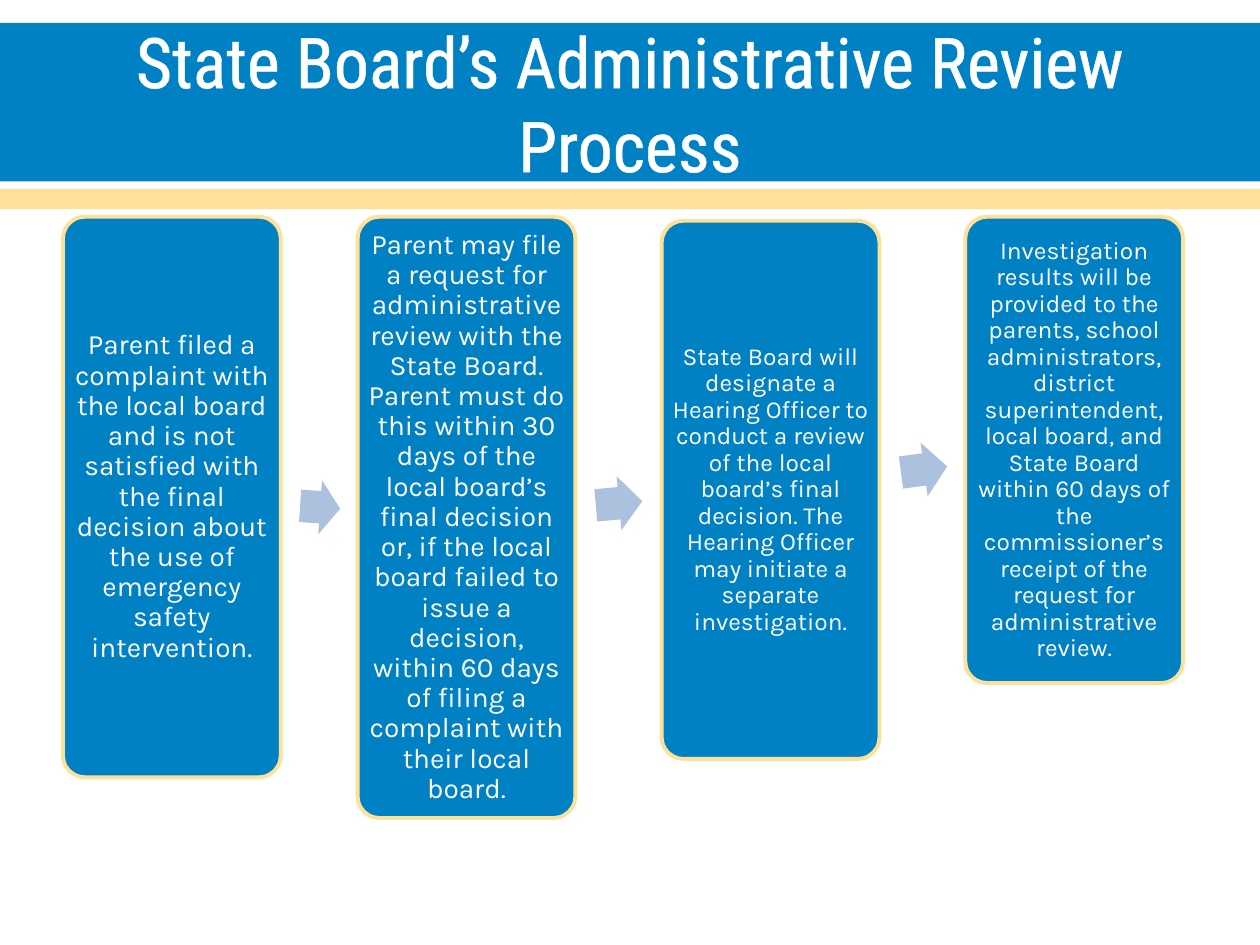
from lxml import etree
from pptx import Presentation
from pptx import util as u
from pptx.dml.color import RGBColor
from pptx.enum import shapes, text
from pptx.oxml import ns

BLUE, GOLD, PALE, WHITE = "0081C4", "FFE098", "ABC1DE", "FFFFFF"
KIND = shapes.MSO_SHAPE


def paint(part, tone):
    part.solid()
    part.fore_color.rgb = RGBColor.from_string(tone)


def write(shape, words, font="Karla", size=16, tone=WHITE, pad=None, lead=None, edge=None):
    frame = shape.text_frame
    frame.word_wrap = True
    frame.vertical_anchor = text.MSO_ANCHOR.MIDDLE
    if pad is not None:
        for side in ("left", "right", "top", "bottom"):
            setattr(frame, f"margin_{side}", u.Cm(pad))
    para = frame.paragraphs[0]
    para.alignment = text.PP_ALIGN.CENTER
    para.line_spacing = lead
    run = para.add_run()
    run.text = words
    run.font.name = font
    run.font.size = u.Pt(size)
    paint(run.font.fill, tone)
    if edge:
        line = etree.Element(ns.qn("a:ln"), w=str(u.Pt(edge)))
        fill = etree.SubElement(line, ns.qn("a:solidFill"))
        etree.SubElement(fill, ns.qn("a:srgbClr"), val=tone)
        run.font._element.insert(0, line)


class Deck:
    line = 2.22
    wide = 4.39
    curve = 0.1

    def __init__(self, slide):
        self.slide = slide

    def shape(self, kind, box, tone):
        item = self.slide.shapes.add_shape(kind, *map(u.Cm, box))
        item.shadow.inherit = False
        paint(item.fill, tone)
        item.line.fill.background()
        return item

    def band(self, top, high, tone):
        self.shape(KIND.RECTANGLE, (0, top, 25.4, high), tone)

    def title(self, words):
        box = self.slide.shapes.add_textbox(*map(u.Cm, (1.27, 0.51, 22.86, 3.1)))
        write(box, words, font="Roboto Condensed", size=40, edge=1.1)

    def card(self, left, top, high, size, pad, words):
        item = self.shape(KIND.ROUNDED_RECTANGLE, (left, top, self.wide, high), BLUE)
        item.adjustments[0] = self.curve
        paint(item.line.fill, GOLD)
        item.line.width = u.Pt(self.line)
        write(item, words, size=size, pad=pad, lead=0.9)

    def arrow(self, left, top, wide, turn):
        item = self.shape(KIND.RIGHT_ARROW, (left, top, wide, 1.09), PALE)
        item.adjustments[0] = 0.6
        item.adjustments[1] = 0.5
        item.rotation = turn


CARDS = [
    (1.27, 4.37, 11.3, 16, 0.05,
     "Parent filed a complaint with the local board and is not satisfied with "
     "the final decision about the use of emergency safety intervention."),
    (7.21, 4.37, 12.12, 16, 0.05,
     "Parent may file a request for administrative review with the State Board. "
     "Parent must do this within 30 days of the local board’s final decision or, "
     "if the local board failed to issue a decision, within 60 days of filing a "
     "complaint with their local board."),
    (13.34, 4.45, 10.85, 14, 0.03,
     "State Board will designate a Hearing Officer to conduct a review of the "
     "local board’s final decision. The Hearing Officer may initiate a separate "
     "investigation."),
    (19.46, 4.37, 9.4, 14, 0.03,
     "Investigation results will be provided to the parents, school "
     "administrators, district superintendent, local board, and State Board "
     "within 60 days of the commissioner’s receipt of the request for "
     "administrative review."),
]
ARROWS = [(6.05, 9.68, 0.81, 3.9), (12.01, 9.6, 0.94, 354.9), (18.16, 8.92, 0.94, 352.5)]


def main():
    show = Presentation()
    show.slide_width, show.slide_height = u.Cm(25.4), u.Cm(19.05)
    deck = Deck(show.slides.add_slide(show.slide_layouts[6]))
    deck.band(0.46, 3.2, BLUE)
    deck.band(3.81, 0.41, GOLD)
    deck.title("State Board’s Administrative Review Process")
    for card in CARDS:
        deck.card(*card)
    for arrow in ARROWS:
        deck.arrow(*arrow)
    show.save("out.pptx")


if __name__ == "__main__":
    main()
